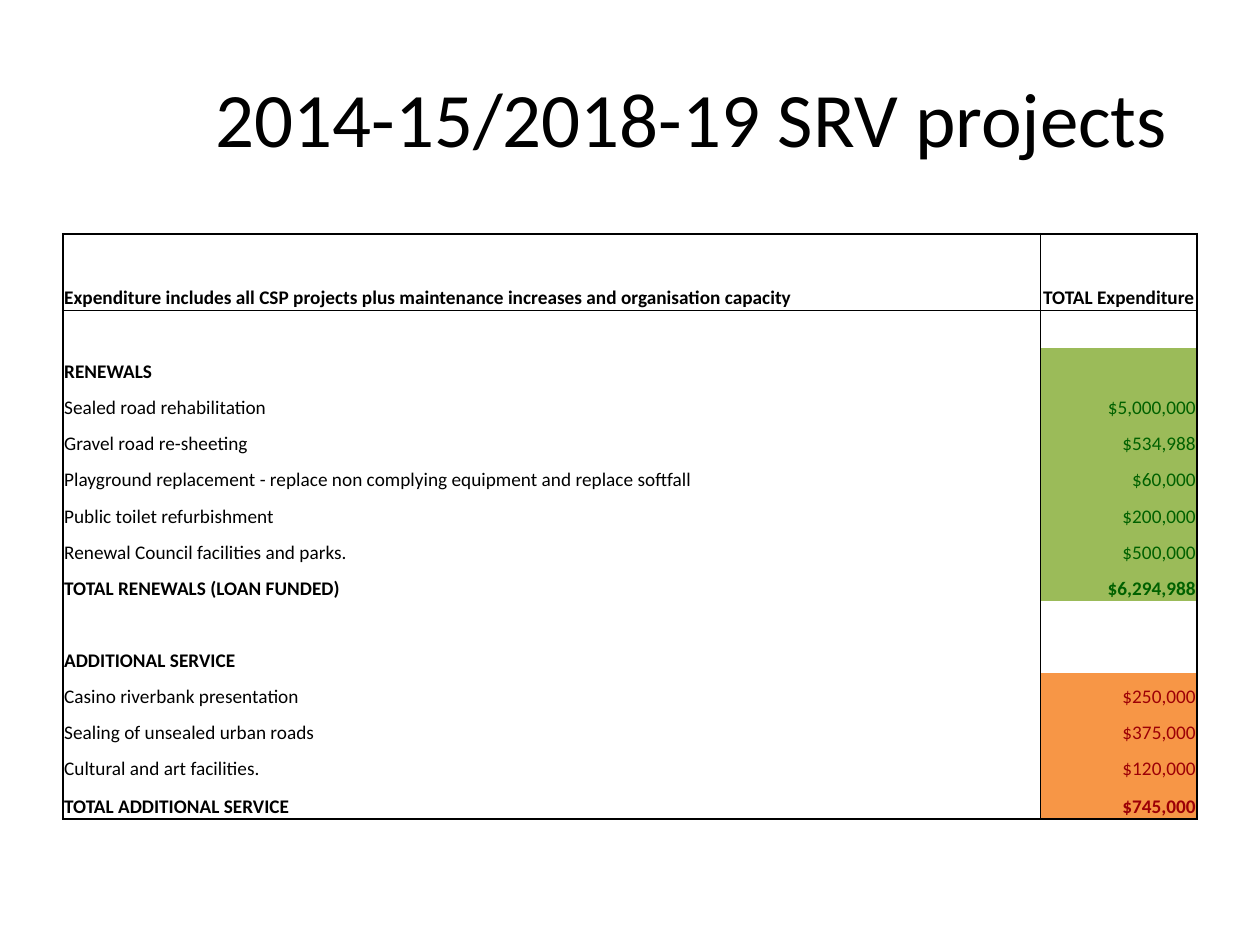
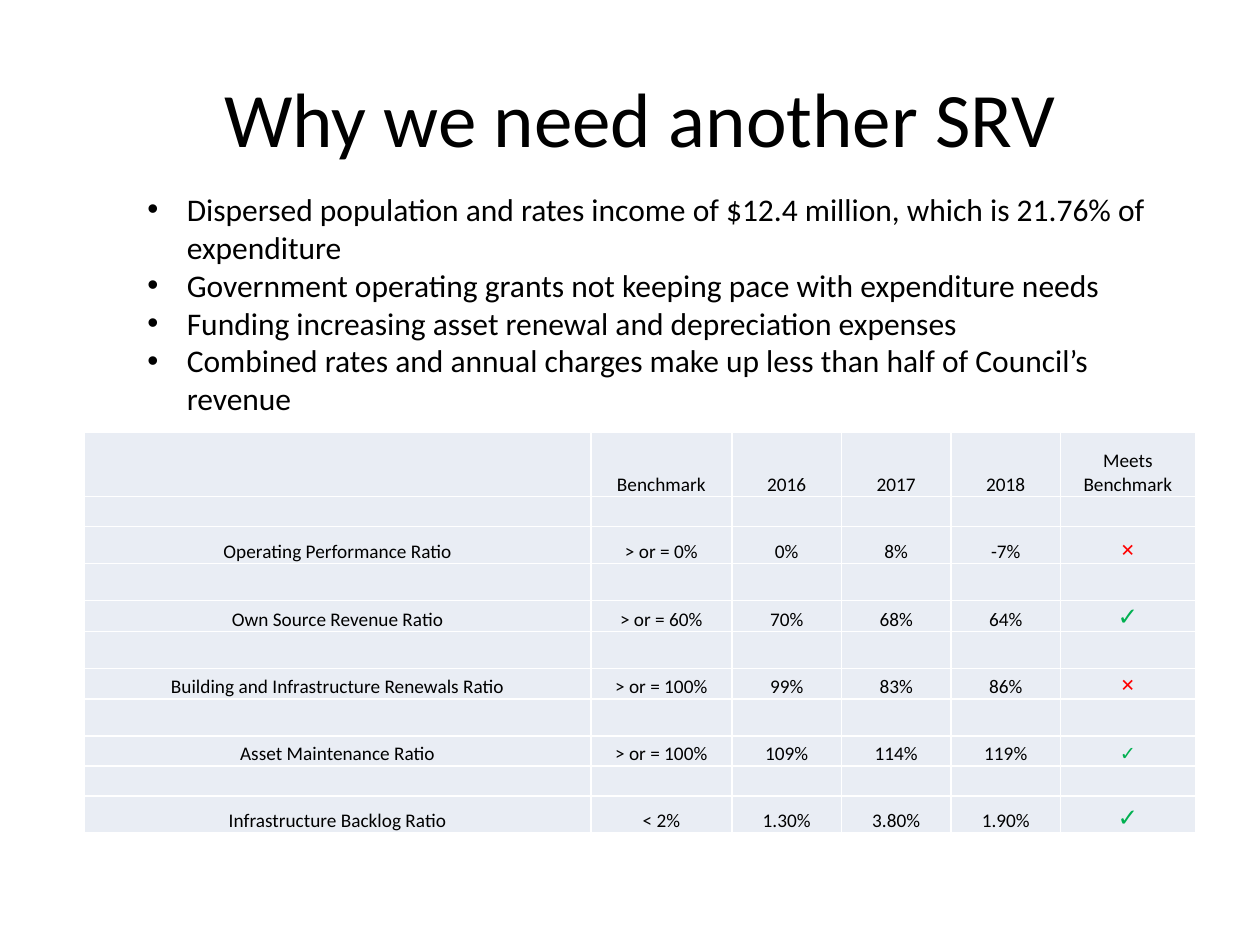
from pptx import Presentation
from pptx.dml.color import RGBColor
from pptx.enum.text import MSO_ANCHOR as Anchor, MSO_AUTO_SIZE as AutoSize, PP_ALIGN as Align
from pptx.oxml.ns import qn
from pptx.util import Pt
from lxml.etree import SubElement

COLORS = {"ink": "000000", "white": "FFFFFF", "renewal": "9BBB59", "renewal_text": "006100",
          "service": "F79646", "service_text": "9C0006", "ratio": "E9EDF4",
          "cross": "FF0000", "tick": "00B050"}
FONT = "Calibri"


def style_font(p, size, color="ink", bold=False, name=FONT):
    p.font.name = name
    p.font.size = Pt(size)
    p.font.bold = bold
    p.font.color.rgb = RGBColor.from_string(COLORS[color])


def set_cell(cell, text, align, fill, edges, line, **font):
    """Format one cell; edges holds the left, right, top and bottom line widths."""
    cell.margin_left = cell.margin_right = cell.margin_top = Pt(0.7)
    cell.margin_bottom = 0
    cell.vertical_anchor = Anchor.BOTTOM
    tc_pr = cell._tc.get_or_add_tcPr()
    for side, width in zip("LRTB", edges):
        ln = SubElement(tc_pr, qn(f"a:ln{side}"), w=str(Pt(width)))
        if width:
            solid = SubElement(ln, qn("a:solidFill"))
            SubElement(solid, qn("a:srgbClr"), val=COLORS[line])
        else:
            SubElement(ln, qn("a:noFill"))
    if fill:
        cell.fill.solid()
        cell.fill.fore_color.rgb = RGBColor.from_string(COLORS[fill])
    else:
        cell.fill.background()
    p = cell.text_frame.paragraphs[0]
    p.text = text
    p.alignment = align
    style_font(p, **font)


prs = Presentation()
prs.slide_width, prs.slide_height = Pt(720), Pt(540)

# Title, left edge and right inset; then table position, columns and rows
pages = [
    ("2014-15/2018-19 SRV projects", 116, 9,
     (36, 133.7), [558.7, 89.3], [43.4, 21.6] + [20.65] * 12 + [21.6]),
    ("Why we need another SRV", 121.7, 74,
     (48.2, 247.2), [289.4, 80.7, 62.6, 62.6, 62.6, 77],
     [36.5, 17.2, 21.2, 21.2, 17.2, 21.2, 17.2, 21.2, 17.2, 17.2, 21.2]),
]
slides, tables = [], []
for title, left, inset_right, (x, y), widths, heights in pages:
    s = prs.slides.add_slide(prs.slide_layouts[6])
    tf = s.shapes.add_textbox(Pt(left), Pt(21.6), Pt(684 - left), Pt(90)).text_frame
    tf.word_wrap = True
    tf.vertical_anchor = Anchor.MIDDLE
    tf.margin_left, tf.margin_right = 0, Pt(inset_right)
    p = tf.paragraphs[0]
    p.text = title
    p.alignment = Align.CENTER
    style_font(p, 44)

    table = s.shapes.add_table(len(heights), len(widths), Pt(x), Pt(y),
                               Pt(sum(widths)), Pt(sum(heights))).table
    table.first_row = table.horz_banding = False
    for column, width in zip(table.columns, widths):
        column.width = Pt(width)
    for row, height in zip(table.rows, heights):
        row.height = Pt(height)
    slides.append(s)
    tables.append(table)

# Slide 1: expenditure by project (label, amount, group colour)
projects = [
    ("Expenditure includes all CSP projects plus maintenance increases and organisation capacity",
     "TOTAL Expenditure", None),
    ("", "", None),
    ("RENEWALS", "", "renewal"),
    ("Sealed road rehabilitation", "$5,000,000", "renewal"),
    ("Gravel road re-sheeting", "$534,988", "renewal"),
    ("Playground replacement - replace non complying equipment and replace softfall",
     "$60,000", "renewal"),
    ("Public toilet refurbishment", "$200,000", "renewal"),
    ("Renewal Council facilities and parks.", "$500,000", "renewal"),
    ("TOTAL RENEWALS (LOAN FUNDED)", "$6,294,988", "renewal"),
    ("", "", None),
    ("ADDITIONAL SERVICE", "", None),
    ("Casino riverbank presentation", "$250,000", "service"),
    ("Sealing of unsealed urban roads", "$375,000", "service"),
    ("Cultural and art facilities.", "$120,000", "service"),
    ("TOTAL ADDITIONAL SERVICE", "$745,000", "service"),
]
last = len(projects) - 1
for i, (label, amount, group) in enumerate(projects):
    bold = i == 0 or label.isupper()
    top = {0: 1.5, 1: 0.5}.get(i, 0)
    bottom = {0: 0.5, last: 1.5}.get(i, 0)
    set_cell(tables[0].cell(i, 0), label, Align.LEFT, None, (1.5, 0.5, top, bottom), "ink",
             size=11, bold=bold)
    set_cell(tables[0].cell(i, 1), amount, Align.RIGHT if i else Align.CENTER, group,
             (0.5, 1.5, top, bottom), "ink", size=11, bold=bold,
             color=f"{group}_text" if group else "ink")

# Slide 2: ratios on every second row, with spacer rows between
ratios = [
    ("", "Benchmark", "2016", "2017", "2018", "Meets Benchmark"),
    ("Operating Performance Ratio", "> or = 0%", "0%", "8%", "-7%", "×"),
    ("Own Source Revenue Ratio", "> or = 60%", "70%", "68%", "64%", "✓"),
    ("Building and Infrastructure Renewals Ratio", "> or = 100%", "99%", "83%", "86%", "×"),
    ("Asset Maintenance Ratio", "> or = 100%", "109%", "114%", "119%", "✓"),
    ("Infrastructure Backlog Ratio", "< 2%", "1.30%", "3.80%", "1.90%", "✓"),
]
marks = {"×": dict(size=14, color="cross", bold=True, name="Times New Roman"),
         "✓": dict(size=14, color="tick", bold=True)}
for i in range(len(tables[1].rows)):
    values = ratios[i // 2] if i % 2 == 0 else [""] * 6
    for j, value in enumerate(values):
        font = dict(marks.get(value, {"size": 11}))
        if values[0].startswith("Asset"):
            font["size"] = 11
        set_cell(tables[1].cell(i, j), value, Align.CENTER, "ratio", (1, 1, 1, 1), "white", **font)

reasons = [
    "Dispersed population and rates income of $12.4 million, which is 21.76% of expenditure",
    "Government operating grants not keeping pace with expenditure needs",
    "Funding increasing asset renewal and depreciation expenses",
    "Combined rates and annual charges make up less than half of Council’s revenue",
]
tf = slides[1].shapes.add_textbox(Pt(77.2), Pt(105.1), Pt(607), Pt(138.2)).text_frame
tf.word_wrap = True
tf.auto_size = AutoSize.SHAPE_TO_FIT_TEXT
for i, reason in enumerate(reasons):
    p = tf.add_paragraph() if i else tf.paragraphs[0]
    p.text = reason
    p_pr = p._p.get_or_add_pPr()
    p_pr.set("marL", str(Pt(22.5)))
    p_pr.set("indent", str(-Pt(22.5)))
    SubElement(p_pr, qn("a:buFont"), typeface="Arial")
    SubElement(p_pr, qn("a:buChar"), char="•")
    style_font(p, 18)

prs.save("out.pptx")
